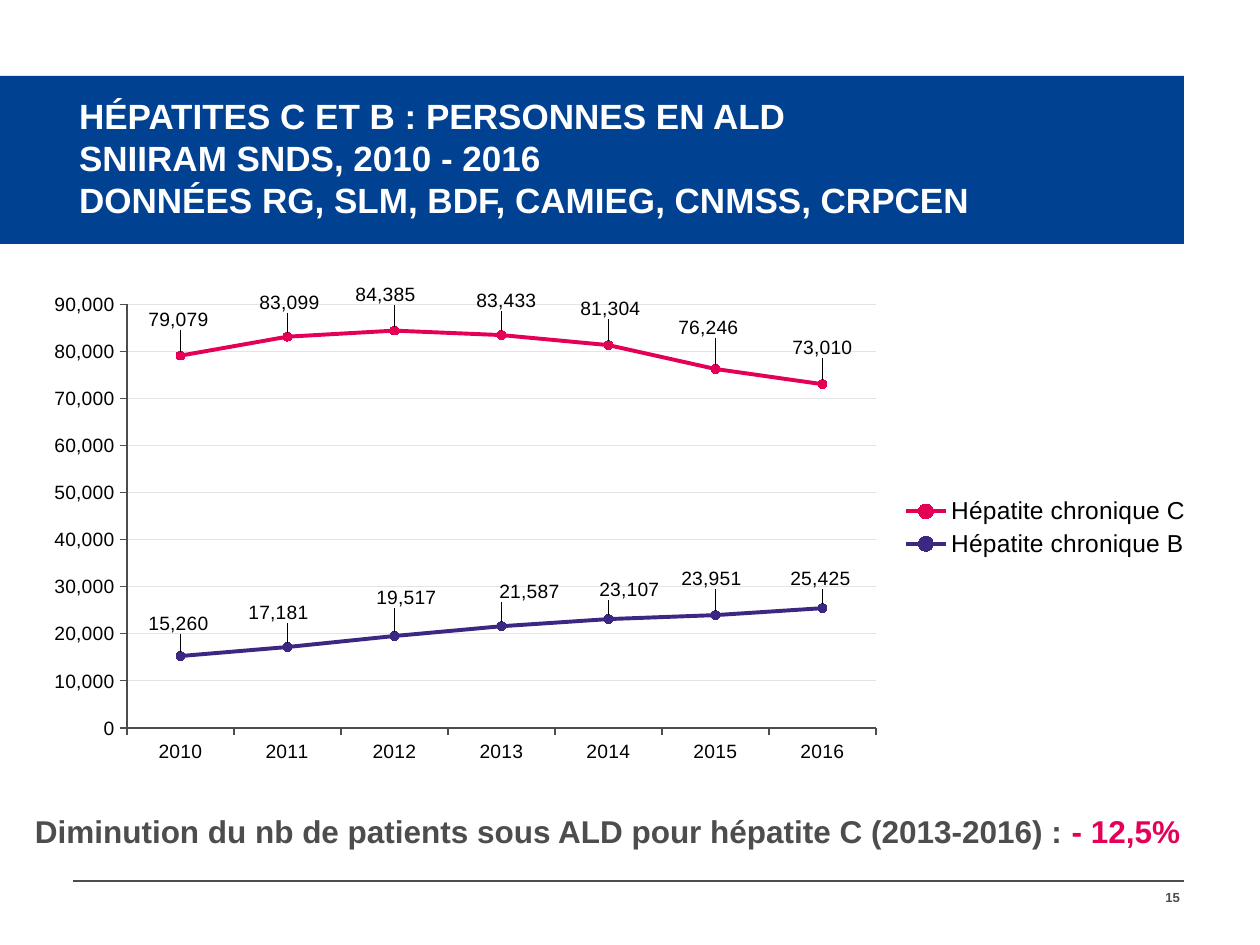
from dataclasses import dataclass

from lxml.etree import SubElement
from pptx import Presentation
from pptx.chart.data import CategoryChartData
from pptx.dml.color import RGBColor
from pptx.enum.chart import XL_CHART_TYPE as ChartType
from pptx.enum.chart import XL_LABEL_POSITION as LabelPosition
from pptx.enum.chart import XL_LEGEND_POSITION as LegendPosition
from pptx.enum.chart import XL_MARKER_STYLE as MarkerStyle
from pptx.enum.chart import XL_TICK_MARK as TickMark
from pptx.enum.shapes import MSO_CONNECTOR as Connector
from pptx.enum.shapes import MSO_SHAPE as Shape
from pptx.enum.text import MSO_ANCHOR as Anchor
from pptx.enum.text import PP_ALIGN as Align
from pptx.oxml import parse_xml
from pptx.oxml.ns import qn
from pptx.util import Emu, Pt


@dataclass(frozen=True)
class Theme:
    font: str = "Arial"
    blue: str = "004192"
    white: str = "FFFFFF"
    black: str = "000000"
    gray: str = "4D4D4F"
    grid: str = "E4E4E5"
    pink: str = "E30056"
    violet: str = "3C2782"
    title_size: float = 20
    message_size: float = 18
    legend_size: float = 14
    label_size: float = 11
    number_size: float = 7.5


THEME = Theme()
EMU_PER_PX = 914400 / 126
CHART_NS = "http://schemas.openxmlformats.org/drawingml/2006/chart"

TITLE_LINES = [
    "HÉPATITES C ET B : PERSONNES EN ALD",
    "SNIIRAM SNDS, 2010 - 2016",
    "DONNÉES RG, SLM, BDF, CAMIEG, CNMSS, CRPCEN",
]
YEARS = [str(year) for year in range(2010, 2017)]
# Name, colour, values, label shifts in px from the place above each point
SERIES = [
    ("Hépatite chronique C", THEME.pink,
     [79079, 83099, 84385, 83433, 81304, 76246, 73010],
     [(-2, -16), (2, -14), (-9, -16), (5, -14), (2, -16), (-7, -21), (0, -16)]),
    ("Hépatite chronique B", THEME.violet,
     [15260, 17181, 19517, 21587, 23107, 23951, 25425],
     [(-2, -12), (-9, -14), (12, -18), (28, -14), (21, -9), (-4, -16), (-2, -9)]),
]


def px(length):
    return Emu(round(length * EMU_PER_PX))


def color(value):
    return RGBColor.from_string(value)


def set_font(font, size, font_color, bold=False):
    font.name = THEME.font
    font.size = Pt(size)
    font.bold = bold
    font.color.rgb = color(font_color)


def set_line(line, line_color, width=0.75):
    line.color.rgb = color(line_color)
    line.width = Pt(width)


def set_frame(frame, anchor=Anchor.TOP, wrap=True):
    frame.margin_left = frame.margin_right = px(5)
    frame.margin_top = frame.margin_bottom = 0
    frame.vertical_anchor = anchor
    frame.word_wrap = wrap


def manual_layout(**settings):
    """Return a chart layout element holding the given settings."""
    items = "".join(f'<c:{name} val="{value}"/>' for name, value in settings.items())
    return parse_xml(f'<c:layout xmlns:c="{CHART_NS}"><c:manualLayout>{items}'
                     "</c:manualLayout></c:layout>")


def add_header(slide, left, top, width, height):
    # Band, placed behind the title
    band = slide.shapes.add_shape(Shape.RECTANGLE, px(left), px(top), px(width), px(height))
    band.shadow.inherit = False
    band.fill.solid()
    band.fill.fore_color.rgb = color(THEME.blue)
    band.line.fill.background()

    title = slide.shapes.title
    title.element.addprevious(band.element)
    title.left, title.top = px(left + 74), px(top + 3)
    title.width, title.height = px(905), px(157)
    frame = title.text_frame
    set_frame(frame, Anchor.MIDDLE)
    frame.text = "\v".join(TITLE_LINES)
    paragraph = frame.paragraphs[0]
    paragraph.alignment = Align.LEFT
    paragraph.line_spacing = 1.0
    set_font(paragraph.font, THEME.title_size, THEME.white, True)


def style_axis(axis):
    axis.major_tick_mark = TickMark.OUTSIDE
    axis.minor_tick_mark = TickMark.NONE
    set_line(axis.format.line, THEME.gray)
    set_font(axis.tick_labels.font, THEME.label_size, THEME.black)


def style_series(series, series_color, shifts, width, height):
    series.smooth = False
    set_line(series.format.line, series_color, 2.25)
    marker = series.marker
    marker.style = MarkerStyle.CIRCLE
    marker.size = 5
    marker.format.fill.solid()
    marker.format.fill.fore_color.rgb = color(series_color)
    set_line(marker.format.line, series_color)

    labels = series.data_labels
    labels.show_value = True
    labels.position = LabelPosition.ABOVE
    set_font(labels.font, THEME.label_size, THEME.black)
    for index, (across, down) in enumerate(shifts):
        label = series.points[index].data_label
        label.position = LabelPosition.ABOVE
        set_font(label.font, THEME.label_size, THEME.black)
    for element, (across, down) in zip(labels._element.findall(qn("c:dLbl")), shifts):
        element.find(qn("c:idx")).addnext(manual_layout(x=across / width, y=down / height))


def add_line_chart(slide, left, top, width, height):
    data = CategoryChartData(number_format="#,##0")
    data.categories = YEARS
    for name, _, values, _ in SERIES:
        data.add_series(name, values)
    chart = slide.shapes.add_chart(ChartType.LINE_MARKERS, px(left), px(top),
                                   px(width), px(height), data).chart
    set_font(chart.font, THEME.label_size, THEME.black)
    chart.has_title = False
    chart.plots[0].vary_by_categories = False

    # Axes
    style_axis(chart.category_axis)
    value_axis = chart.value_axis
    style_axis(value_axis)
    value_axis.minimum_scale, value_axis.maximum_scale = 0, 90000
    value_axis.major_unit = 10000
    value_axis.tick_labels.number_format = "#,##0"
    value_axis.tick_labels.number_format_is_linked = False
    set_line(value_axis.major_gridlines.format.line, THEME.grid)

    # Legend and plot area
    chart.has_legend = True
    chart.legend.position = LegendPosition.RIGHT
    chart.legend.include_in_layout = False
    set_font(chart.legend.font, THEME.legend_size, THEME.black)
    plot_area = chart._chartSpace.chart.plotArea
    for old_layout in plot_area.findall(qn("c:layout")):
        plot_area.remove(old_layout)
    plot_area.insert(0, manual_layout(
        layoutTarget="inner", xMode="edge", yMode="edge",
        x=97 / width, y=21 / height, w=749 / width, h=424 / height))

    for series, (_, series_color, _, shifts) in zip(chart.plots[0].series, SERIES):
        style_series(series, series_color, shifts, width, height)


def add_message(slide, left, top, width, height):
    box = slide.shapes.add_textbox(px(left), px(top), px(width), px(height))
    box.fill.solid()
    box.fill.fore_color.rgb = color(THEME.white)
    set_frame(box.text_frame)
    paragraph = box.text_frame.paragraphs[0]
    paragraph.line_spacing = 1.5
    set_font(paragraph.font, THEME.message_size, THEME.gray, True)
    paragraph.add_run().text = "Diminution du nb de patients sous ALD pour hépatite C (2013-2016) : "
    change = paragraph.add_run()
    change.text = "- 12,5%"
    change.font.color.rgb = color(THEME.pink)


def add_footer(slide, left, top, width):
    right = left + width
    rule = slide.shapes.add_connector(Connector.STRAIGHT, px(left), px(top), px(right), px(top))
    set_line(rule.line, THEME.gray)
    SubElement(rule.element.spPr, qn("a:effectLst"))

    number = slide.shapes.add_textbox(px(right - 33), px(top + 8), px(34), px(16))
    set_frame(number.text_frame, wrap=False)
    paragraph = number.text_frame.paragraphs[0]
    paragraph.text = "15"
    paragraph.alignment = Align.RIGHT
    set_font(paragraph.font, THEME.number_size, THEME.gray, True)


def main():
    presentation = Presentation()
    presentation.slide_width, presentation.slide_height = px(1260), px(945)
    slide = presentation.slides.add_slide(presentation.slide_layouts[5])
    add_header(slide, 0, 76, 1184, 168)
    add_footer(slide, 73, 881, 1111)
    add_message(slide, 30, 793, 1174, 57)
    add_line_chart(slide, 30, 283, 1174, 489)
    presentation.save("out.pptx")


if __name__ == "__main__":
    main()
